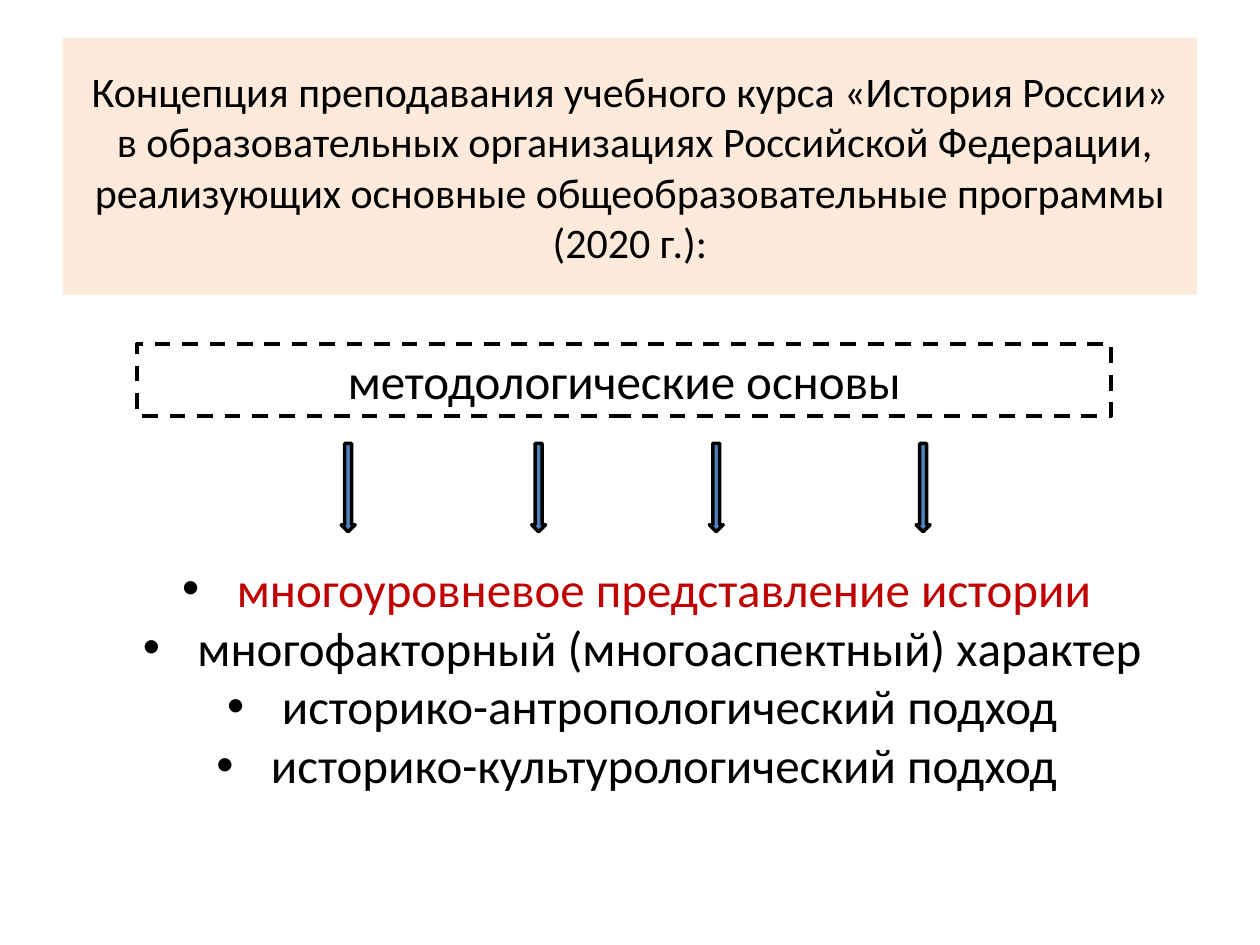
from typing import NamedTuple

from lxml.etree import SubElement
from pptx import Presentation
from pptx.dml.color import RGBColor
from pptx.enum.dml import MSO_LINE
from pptx.enum.shapes import MSO_SHAPE
from pptx.enum.text import MSO_ANCHOR, PP_ALIGN
from pptx.oxml.ns import qn
from pptx.util import Cm, Pt

BLACK = RGBColor(0x00, 0x00, 0x00)
RED = RGBColor(0xC0, 0x00, 0x00)
BLUE = RGBColor(0x4F, 0x81, 0xBD)
PEACH = RGBColor(0xFD, 0xEA, 0xDA)
FONT = "Calibri"


class Frame(NamedTuple):
    left: float
    top: float
    width: float
    height: float

    def lengths(self) -> list[Cm]:
        return [Cm(value) for value in self]


class Approach(NamedTuple):
    text: str
    color: RGBColor = BLACK


TITLE = (
    "Концепция преподавания учебного курса «История России»\v"
    " в образовательных организациях Российской Федерации, "
    "реализующих основные общеобразовательные программы (2020 г.):"
)
TITLE_FRAME = Frame(1.27, 0.76, 22.86, 5.18)
BASIS_FRAME = Frame(2.77, 6.93, 19.63, 1.45)
LIST_FRAME = Frame(1.78, 11.13, 22.63, 5.05)
ARROW_LEFTS = (6.88, 10.72, 14.3, 18.47)
ARROW_TOP, ARROW_WIDTH, ARROW_HEIGHT = 8.94, 0.28, 1.78
APPROACHES = (
    Approach("многоуровневое представление истории ", RED),
    Approach("многофакторный (многоаспектный) характер"),
    Approach("историко-антропологический подход"),
    Approach("историко-культурологический подход "),
)


def style_paragraph(para, size: int, color: RGBColor = BLACK) -> None:
    para.alignment = PP_ALIGN.CENTER
    para.font.name = FONT
    para.font.size = Pt(size)
    para.font.color.rgb = color


def add_plain_shape(page, kind: MSO_SHAPE, frame: Frame):
    shape = page.shapes.add_shape(kind, *frame.lengths())
    shape.shadow.inherit = False
    return shape


def fill_solid(shape, color: RGBColor) -> None:
    shape.fill.solid()
    shape.fill.fore_color.rgb = color


def outline(shape, width: float) -> None:
    shape.line.color.rgb = BLACK
    shape.line.width = Pt(width)


def write_label(shape, text: str, size: int) -> None:
    shape.text_frame.word_wrap = True
    shape.text_frame.vertical_anchor = MSO_ANCHOR.MIDDLE
    para = shape.text_frame.paragraphs[0]
    para.text = text
    style_paragraph(para, size)


def add_title(page) -> None:
    box = add_plain_shape(page, MSO_SHAPE.RECTANGLE, TITLE_FRAME)
    fill_solid(box, PEACH)
    box.line.fill.background()
    write_label(box, TITLE, 24)


def add_basis(page) -> None:
    box = add_plain_shape(page, MSO_SHAPE.RECTANGLE, BASIS_FRAME)
    box.fill.background()
    outline(box, 2.25)
    box.line.dash_style = MSO_LINE.DASH
    write_label(box, "методологические основы", 28)


def add_arrow(page, left: float) -> None:
    frame = Frame(left, ARROW_TOP, ARROW_WIDTH, ARROW_HEIGHT)
    arrow = add_plain_shape(page, MSO_SHAPE.DOWN_ARROW, frame)
    fill_solid(arrow, BLUE)
    outline(arrow, 2)


def set_bullet(para) -> None:
    properties = para._p.get_or_add_pPr()
    properties.set("marL", str(Cm(0.8)))
    properties.set("indent", str(-Cm(1.1)))
    color = SubElement(properties, qn("a:buClr"))
    SubElement(color, qn("a:srgbClr"), val=str(BLACK))
    SubElement(properties, qn("a:buFont"), typeface="Arial")
    SubElement(properties, qn("a:buChar"), char="•")


def add_approaches(page) -> None:
    box = page.shapes.add_textbox(*LIST_FRAME.lengths())
    box.text_frame.word_wrap = True
    for index, approach in enumerate(APPROACHES):
        para = box.text_frame.paragraphs[0] if index == 0 else box.text_frame.add_paragraph()
        para.text = approach.text
        style_paragraph(para, 28, approach.color)
        set_bullet(para)


def main() -> None:
    deck = Presentation()
    deck.slide_width, deck.slide_height = Cm(25.4), Cm(19.05)
    page = deck.slides.add_slide(deck.slide_layouts[6])
    add_title(page)
    add_approaches(page)
    add_basis(page)
    for left in ARROW_LEFTS:
        add_arrow(page, left)
    deck.save("out.pptx")


if __name__ == "__main__":
    main()
